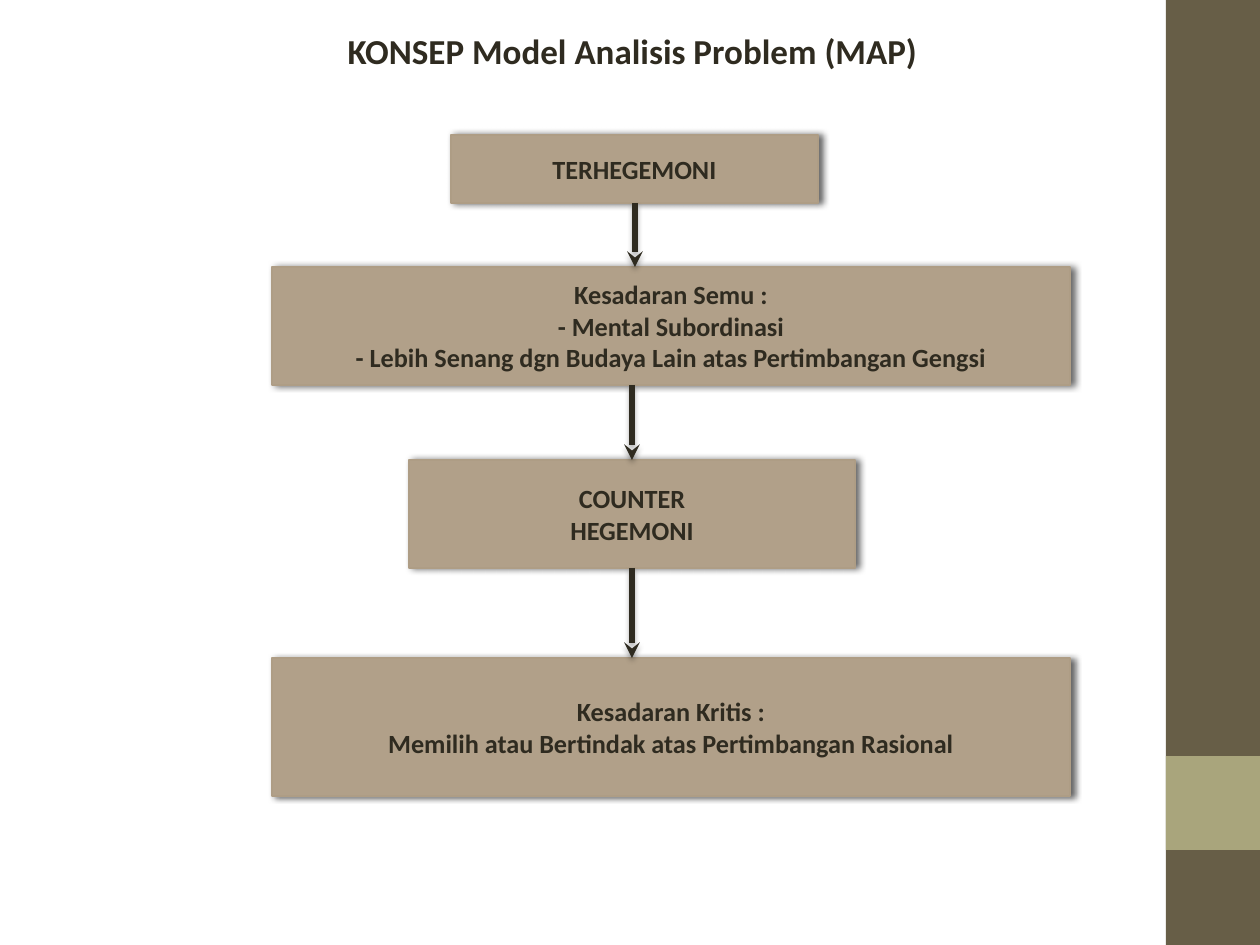
from lxml import etree
from pptx import Presentation
from pptx.dml.color import RGBColor
from pptx.enum.shapes import MSO_CONNECTOR, MSO_SHAPE
from pptx.enum.text import MSO_ANCHOR, MSO_AUTO_SIZE, PP_ALIGN
from pptx.oxml.ns import qn
from pptx.util import Emu, Pt

RECT = MSO_SHAPE.RECTANGLE
LINE = MSO_CONNECTOR.STRAIGHT
CENTER = PP_ALIGN.CENTER
TOP, MIDDLE = MSO_ANCHOR.TOP, MSO_ANCHOR.MIDDLE
FIXED = MSO_AUTO_SIZE.NONE
TITLE_ONLY = 5
SCALE = 914400 / 126


def px(n):
    return Emu(round(n * SCALE))


def color(code):
    return RGBColor.from_string(code)


class Deck:
    font, ink = "Calibri", "2F2B20"
    fill, edge = "B1A089", "AE9D85"

    def __init__(self):
        self.prs = Presentation()
        self.prs.slide_width, self.prs.slide_height = px(1260), px(945)
        layout = self.prs.slide_layouts[TITLE_ONLY]
        self.slide = self.prs.slides.add_slide(layout)

    def label(self, frame, lines, size, anchor):
        frame.word_wrap = True
        frame.auto_size = FIXED
        frame.vertical_anchor = anchor
        frame.text = "\n".join(lines)
        for par in frame.paragraphs:
            par.alignment = CENTER
            par.font.name, par.font.size = self.font, Pt(size)
            par.font.bold = True
            par.font.color.rgb = color(self.ink)

    def shade(self, shape, alpha, blur, dist, angle):
        """Add an outer shadow: alpha in percent, lengths in points."""
        effects = etree.SubElement(shape._element.spPr, qn("a:effectLst"))
        outer = etree.SubElement(
            effects, qn("a:outerShdw"), blurRad=str(Pt(blur)),
            dist=str(Pt(dist)), dir=str(angle * 60000), rotWithShape="0")
        tint = etree.SubElement(outer, qn("a:srgbClr"), val="000000")
        etree.SubElement(tint, qn("a:alpha"), val=str(alpha * 1000))

    def title(self, x, y, w, h, text):
        head = self.slide.shapes.title
        head.left, head.top, head.width, head.height = map(px, (x, y, w, h))
        self.label(head.text_frame, [text], 20, TOP)

    def band(self, x, y, w, h, fill):
        shape = self.slide.shapes.add_shape(RECT, *map(px, (x, y, w, h)))
        shape.shadow.inherit = False
        shape.fill.solid()
        shape.fill.fore_color.rgb = color(fill)
        shape.line.fill.background()

    def box(self, x, y, w, h, lines):
        shape = self.slide.shapes.add_shape(RECT, *map(px, (x, y, w, h)))
        shape.fill.solid()
        shape.fill.fore_color.rgb = color(self.fill)
        shape.line.color.rgb = color(self.edge)
        shape.line.width = Pt(1)
        self.shade(shape, 60, 4, 2, 0)
        self.label(shape.text_frame, lines, 15, MIDDLE)

    def arrow(self, x, top, end):
        line = self.slide.shapes.add_connector(
            LINE, *map(px, (x, top, x, end)))
        line.line.color.rgb = color(self.ink)
        line.line.width = Pt(3)
        etree.SubElement(line.line._ln, qn("a:tailEnd"), type="stealth")
        self.shade(line, 35, 3.1, 1.8, 90)


def main():
    deck = Deck()

    # Side band with its accent square
    deck.band(1166, 0, 94, 945, "675E47")
    deck.band(1166, 756, 94, 94, "A9A57C")

    deck.title(293, 23, 679, 79, "KONSEP Model Analisis Problem (MAP)")

    # Flow from top to bottom: left, top, width, height, lines
    steps = [
        (451, 135, 367, 68, ["TERHEGEMONI"]),
        (272, 267, 798, 118, [
            "Kesadaran Semu :",
            "- Mental Subordinasi",
            "- Lebih Senang dgn Budaya Lain atas Pertimbangan Gengsi"]),
        (409, 460, 446, 108, ["COUNTER", "HEGEMONI"]),
        (272, 658, 798, 138, [
            "Kesadaran Kritis :",
            "Memilih atau Bertindak atas Pertimbangan Rasional"]),
    ]
    for step in steps:
        deck.box(*step)

    # Each arrow spans the gap between two steps
    for x, prev, step in zip((635, 632, 632), steps, steps[1:]):
        deck.arrow(x, prev[1] + prev[3], step[1])

    deck.prs.save("out.pptx")


if __name__ == "__main__":
    main()
